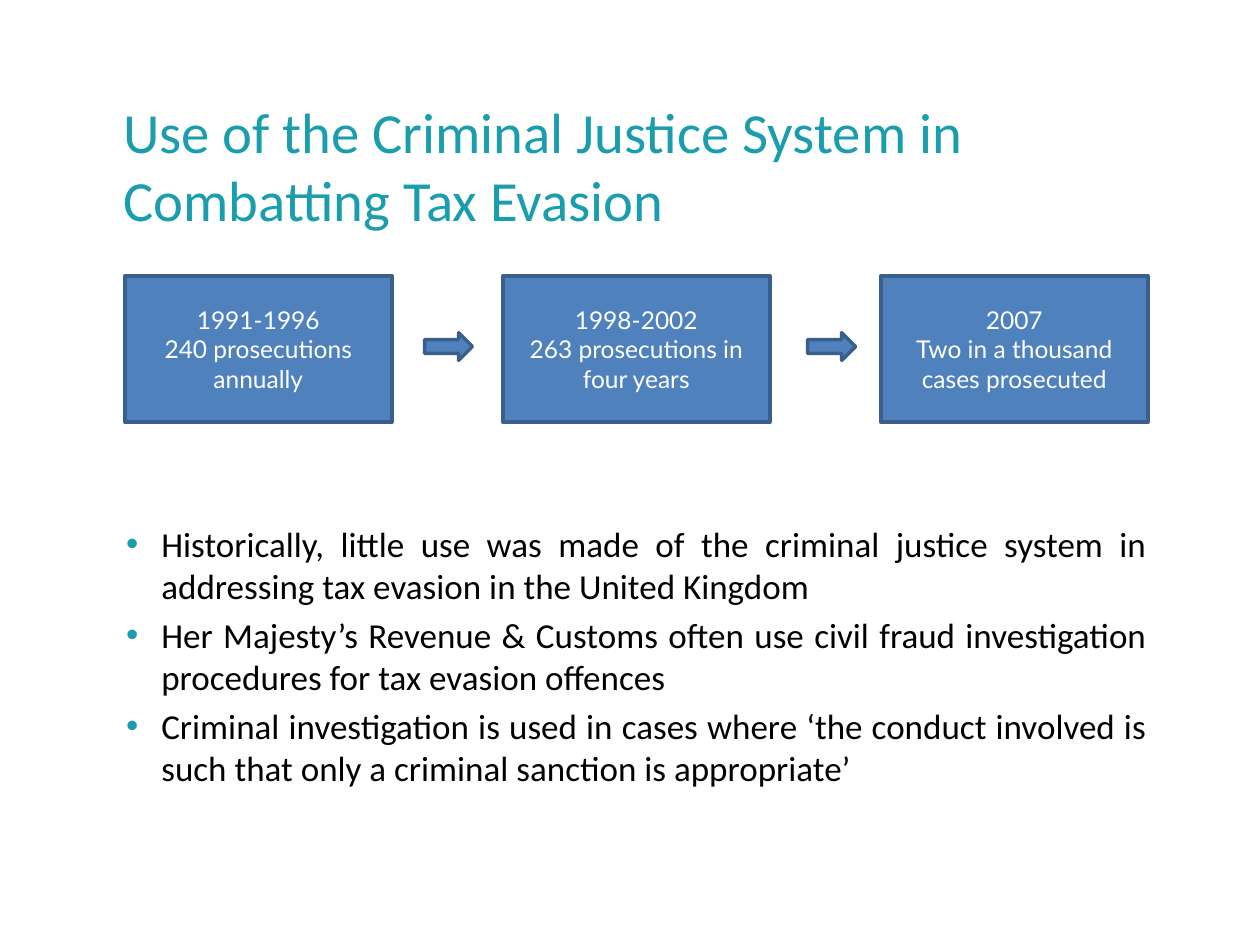
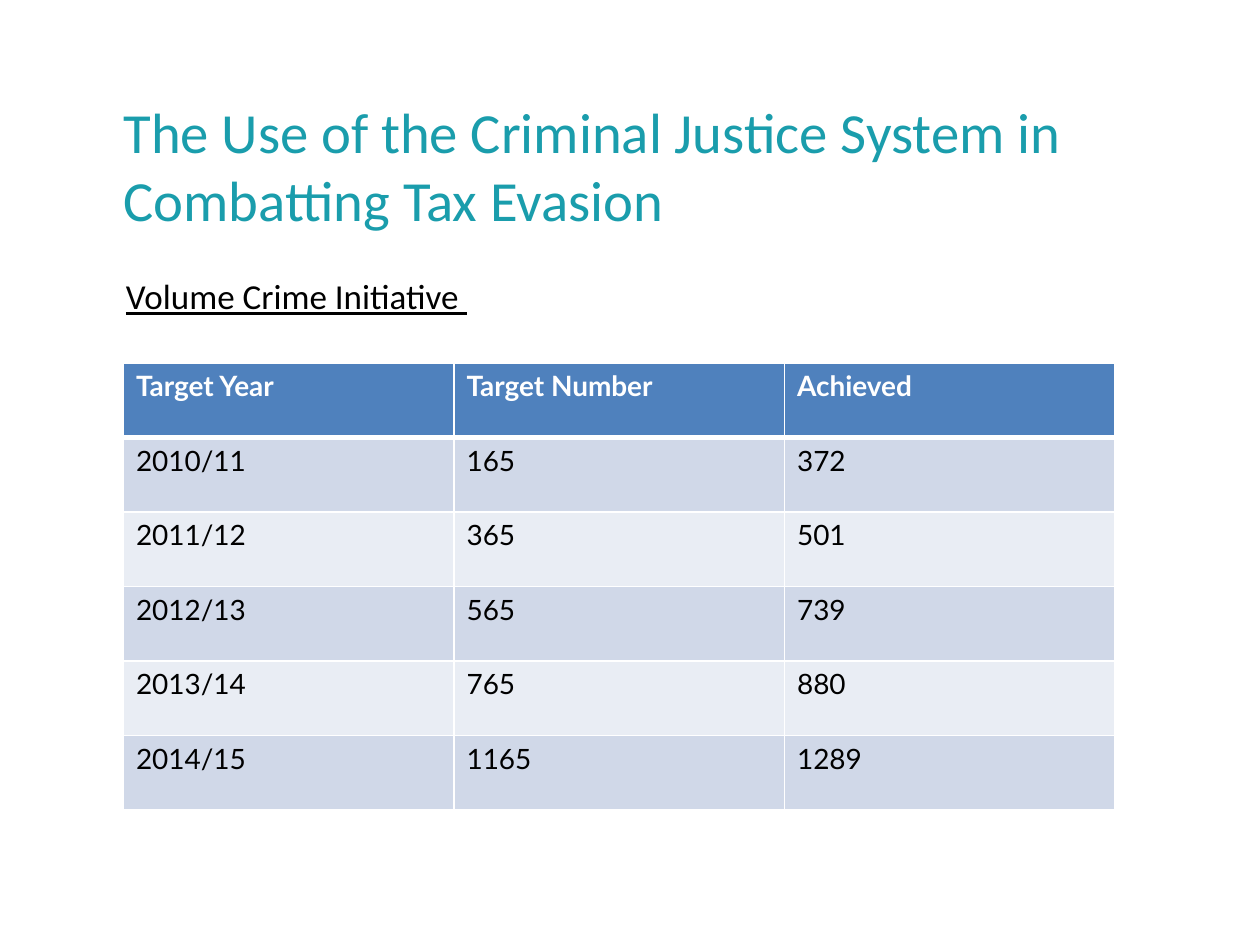
from lxml import etree
from pptx import Presentation
from pptx.dml.color import RGBColor
from pptx.enum.shapes import MSO_SHAPE
from pptx.enum.text import MSO_ANCHOR, PP_ALIGN
from pptx.oxml.ns import qn
from pptx.util import Inches, Pt

PROCESS = MSO_SHAPE.FLOWCHART_PROCESS
ARROW = MSO_SHAPE.RIGHT_ARROW
LEFT, CENTER, JUSTIFY = PP_ALIGN.LEFT, PP_ALIGN.CENTER, PP_ALIGN.JUSTIFY
MIDDLE = MSO_ANCHOR.MIDDLE

# Shared colours and text formats
TEAL, BLUE, NAVY = "1A9DAC", "4F81BD", "3A5F8C"
WHITE, BLACK = "FFFFFF", "000000"
BANDS = ("D0D8E8", "E9EDF4")
TITLE = {"name": "Calibri", "size": Pt(32.4), "color": TEAL}
BODY = {"name": "Calibri", "size": Pt(20), "color": BLACK}
SUBHEADING = {**BODY, "underline": True}
STAGE = {"name": "Lato", "size": Pt(14), "color": WHITE}
CELL = {"name": "Lato", "size": Pt(16), "color": BLACK, "bold": False}
HEADER = {**CELL, "color": WHITE, "bold": True}

# Content
STAGES = [
    ("1991-1996", "240 prosecutions annually"),
    ("1998-2002", "263 prosecutions in four years"),
    ("2007", "Two in a thousand cases prosecuted"),
]
POINTS = [
    "Historically, little use was made of the criminal justice system in "
    "addressing tax evasion in the United Kingdom",
    "Her Majesty’s Revenue & Customs often use civil fraud investigation "
    "procedures for tax evasion offences",
    "Criminal investigation is used in cases where ‘the conduct involved is "
    "such that only a criminal sanction is appropriate’",
]
TARGETS = [
    ("Target Year", "Target Number", "Achieved"),
    ("2010/11", "165", "372"),
    ("2011/12", "365", "501"),
    ("2012/13", "565", "739"),
    ("2013/14", "765", "880"),
    ("2014/15", "1165", "1289"),
]


def rgb(hex_color):
    return RGBColor.from_string(hex_color)


def box(left, top, width, height):
    return [Inches(value) for value in (left, top, width, height)]


def apply_format(font, text_format):
    for attribute, value in text_format.items():
        if attribute == "color":
            font.color.rgb = rgb(value)
        else:
            setattr(font, attribute, value)


def add_bullet(paragraph):
    properties = paragraph._p.get_or_add_pPr()
    properties.set("marL", str(Inches(0.29)))
    properties.set("indent", str(Inches(-0.28)))
    color = etree.SubElement(properties, qn("a:buClr"))
    etree.SubElement(color, qn("a:srgbClr"), val=TEAL)
    etree.SubElement(properties, qn("a:buFont"), typeface="Arial")
    etree.SubElement(properties, qn("a:buChar"), char="•")


def write(frame, lines, text_format, align=LEFT, gap=0, bulleted=False):
    frame.word_wrap = True
    for index, line in enumerate(lines):
        paragraph = frame.paragraphs[0] if index == 0 else frame.add_paragraph()
        paragraph.alignment = align
        if index and gap:
            paragraph.space_before = Pt(gap)
        if bulleted:
            add_bullet(paragraph)
        run = paragraph.add_run()
        run.text = line
        apply_format(run.font, text_format)


def add_text(slide, bounds, lines, text_format, **layout):
    frame = slide.shapes.add_textbox(*box(*bounds)).text_frame
    for side in ("left", "top", "right", "bottom"):
        setattr(frame, f"margin_{side}", 0)
    write(frame, lines, text_format, **layout)
    return frame


def add_titled_slide(deck, title):
    slide = deck.slides.add_slide(deck.slide_layouts[6])
    frame = add_text(slide, (0.98, 0.75, 8.62, 1.11), [title], TITLE)
    frame.vertical_anchor = MIDDLE
    return slide


def add_block(slide, kind, bounds, lines=()):
    block = slide.shapes.add_shape(kind, *box(*bounds))
    block.shadow.inherit = False
    block.fill.solid()
    block.fill.fore_color.rgb = rgb(BLUE)
    block.line.color.rgb = rgb(NAVY)
    block.line.width = Pt(2)
    block.text_frame.vertical_anchor = MIDDLE
    write(block.text_frame, lines, STAGE, align=CENTER)


def set_borders(cell, widths):
    properties = cell._tc.get_or_add_tcPr()
    for side, width in widths.items():
        line = etree.SubElement(properties, qn(f"a:ln{side}"), w=str(Pt(width)))
        fill = etree.SubElement(line, qn("a:solidFill"))
        etree.SubElement(fill, qn("a:srgbClr"), val=WHITE)


def add_targets_table(slide, bounds, rows):
    table = slide.shapes.add_table(len(rows), len(rows[0]), *box(*bounds)).table
    table.horz_banding = False
    for r, row in enumerate(rows):
        for c, value in enumerate(row):
            cell = table.cell(r, c)
            top, bottom = (3 if r == 1 else 1), (3 if r == 0 else 1)
            set_borders(cell, {"L": 1, "R": 1, "T": top, "B": bottom})
            cell.fill.solid()
            cell.fill.fore_color.rgb = rgb(BANDS[(r - 1) % 2] if r else BLUE)
            write(cell.text_frame, [value], CELL if r else HEADER)


def build_history_slide(deck):
    slide = add_titled_slide(
        deck, "Use of the Criminal Justice System in Combatting Tax Evasion")
    add_text(slide, (0.99, 4.15, 8.11, 2.2), POINTS, BODY,
             align=JUSTIFY, gap=4, bulleted=True)
    for index, stage in enumerate(STAGES):
        add_block(slide, PROCESS, (0.99 + 3 * index, 2.19, 2.12, 1.16), stage)
    for index in range(len(STAGES) - 1):
        add_block(slide, ARROW, (3.37 + 3.04 * index, 2.64, 0.38, 0.22))


def build_targets_slide(deck):
    slide = add_titled_slide(
        deck, "The Use of the Criminal Justice System in Combatting Tax Evasion")
    add_text(slide, (1, 2.18, 8.1, 0.4), ["Volume Crime Initiative "], SUBHEADING)
    add_targets_table(slide, (0.98, 2.88, 7.87, 3.55), TARGETS)


def main():
    deck = Presentation()
    deck.slide_width, deck.slide_height = Inches(10), Inches(7.5)
    build_history_slide(deck)
    build_targets_slide(deck)
    deck.save("out.pptx")


if __name__ == "__main__":
    main()
